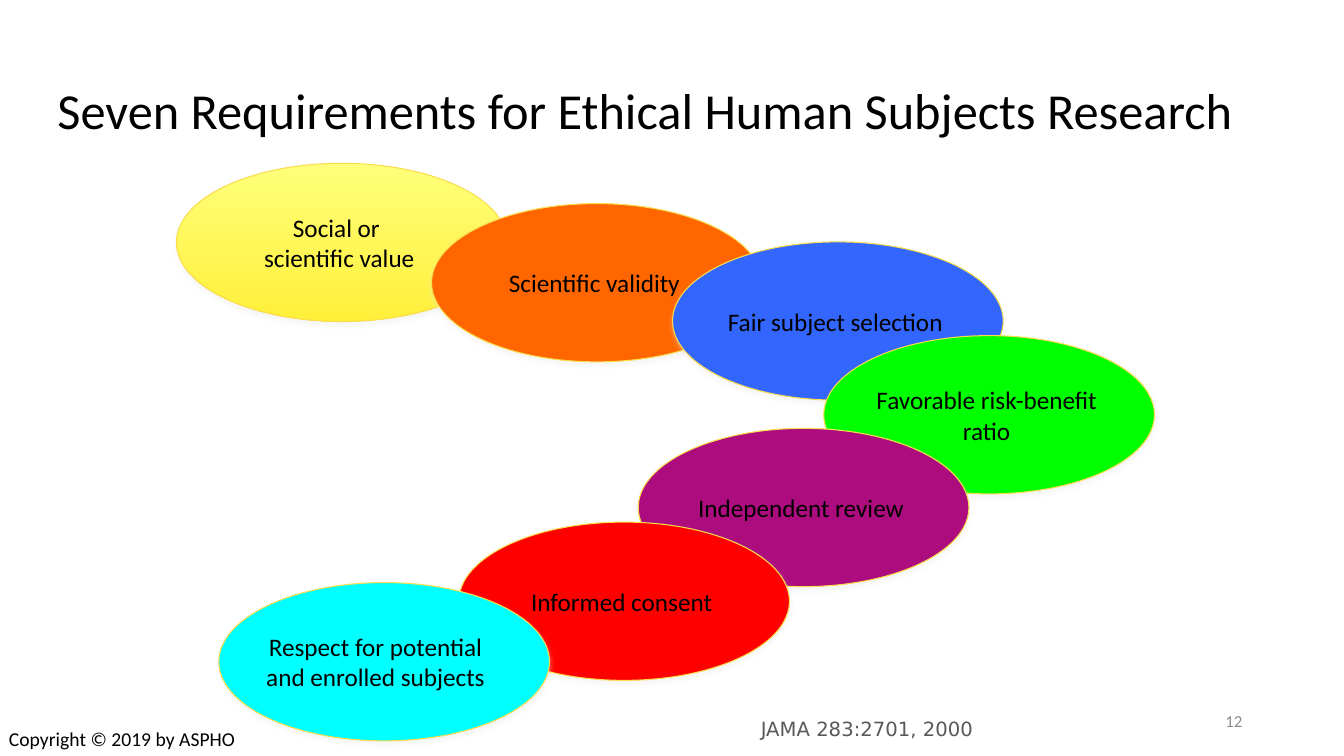
from lxml import etree
from pptx import Presentation
from pptx.dml.color import RGBColor
from pptx.enum.shapes import MSO_SHAPE
from pptx.enum.text import MSO_ANCHOR, MSO_AUTO_SIZE, PP_ALIGN
from pptx.oxml import parse_xml
from pptx.oxml.ns import nsdecls
from pptx.util import Inches, Pt

LEFT, MID, RIGHT = PP_ALIGN.LEFT, PP_ALIGN.CENTER, PP_ALIGN.RIGHT
TOP, CENTER = MSO_ANCHOR.TOP, MSO_ANCHOR.MIDDLE
OVAL = MSO_SHAPE.OVAL
GROW, FIXED = MSO_AUTO_SIZE.SHAPE_TO_FIT_TEXT, MSO_AUTO_SIZE.NONE

OVAL_W, OVAL_H = 3.28, 1.57
LABEL_W, LABEL_H = 2.34, 0.68
INSETS = (0.1, 0.05, 0.1, 0.05)

# label, left, top, fill (two colours make a gradient), label shift
STEPS = [
    ("Social or \vscientific value", 1.75, 1.62, ("FFFF7A", "FFF03A"), 0),
    ("Scientific validity", 4.28, 2.02, ("FF6600",), 0),
    ("Fair subject selection", 6.67, 2.4, ("3366FF",), 0),
    ("Favorable risk-benefit ratio", 8.17, 3.33, ("00FF00",), 0),
    ("Independent review", 6.33, 4.25, ("AC0C7E",), 0),
    ("Informed consent", 4.55, 5.18, ("FF0000",), 0),
    ("Respect for potential and enrolled subjects", 2.17, 5.78, ("00FFFF",), -0.06),
]


def color(code):
    return RGBColor.from_string(code)


def write(shape, text, size=18, font="Calibri", ink="000000", align=LEFT,
          anchor=TOP, insets=INSETS, wrap=True, fit=FIXED, spacing=None):
    frame = shape.text_frame
    frame.word_wrap = wrap
    frame.auto_size = fit
    frame.vertical_anchor = anchor
    (frame.margin_left, frame.margin_top,
     frame.margin_right, frame.margin_bottom) = map(Inches, insets)
    para = frame.paragraphs[0]
    para.text = text
    para.alignment = align
    if spacing:
        para.line_spacing = spacing
    for run in para.runs:
        run.font.size = Pt(size)
        run.font.name = font
        run.font.color.rgb = color(ink)


def shade(shape):
    """Give the shape a soft shadow falling straight down."""
    shape.shadow.inherit = False
    effects = shape._element.spPr.find("{*}effectLst")
    effects.append(parse_xml(
        f'<a:outerShdw {nsdecls("a")} blurRad="{Pt(3)}" dist="{Pt(2)}" '
        'dir="5400000" rotWithShape="0"><a:srgbClr val="E7E6E6">'
        '<a:alpha val="35000"/></a:srgbClr></a:outerShdw>'))
    etree.cleanup_namespaces(effects)


class Deck:
    def __init__(self):
        self.file = Presentation()
        self.file.slide_width = Inches(13.33)
        self.file.slide_height = Inches(7.5)
        self.slide = self.file.slides.add_slide(self.file.slide_layouts[5])

    def title(self, text, box, **style):
        shape = self.slide.shapes.title
        shape.left, shape.top, shape.width, shape.height = map(Inches, box)
        write(shape, text, **style)

    def text(self, text, box, home=None, **style):
        home = home or self.slide
        write(home.shapes.add_textbox(*map(Inches, box)), text, **style)

    def oval(self, box, tones, home):
        shape = home.shapes.add_shape(OVAL, *map(Inches, box))
        if len(tones) > 1:
            shape.fill.gradient()
            shape.fill.gradient_angle = 270
            for stop, tone in zip(shape.fill.gradient_stops, tones):
                stop.color.rgb = color(tone)
        else:
            shape.fill.solid()
            shape.fill.fore_color.rgb = color(tones[0])
        shape.line.color.rgb = color("FADD4D")
        shape.line.width = Pt(0.75)
        shade(shape)

    def step(self, text, left, top, tones, shift):
        """Group an oval with the label at its centre."""
        group = self.slide.shapes.add_group_shape()
        group.shapes  # the group grows as its parts are added
        self.oval((left, top, OVAL_W, OVAL_H), tones, Home(group.shapes))
        box = (left + (OVAL_W - LABEL_W) / 2 + shift,
               top + (OVAL_H - LABEL_H) / 2, LABEL_W, LABEL_H)
        self.text(text, box, group, align=MID, anchor=CENTER,
                  insets=(0.04, 0.04, 0.09, 0.04))


class Home:
    def __init__(self, shapes):
        self.shapes = shapes


def main():
    deck = Deck()
    deck.title("Seven Requirements for Ethical Human Subjects Research",
               (0.47, 0.4, 11.95, 1.45), size=36, anchor=CENTER,
               insets=(0.1, 0.05, 0.09, 0.05), spacing=0.9)
    deck.text("12", (9.42, 6.95, 3, 0.4), size=12, ink="8C8C8C",
              align=RIGHT, anchor=CENTER)
    for step in STEPS:
        deck.step(*step)
    deck.text("JAMA 283:2701, 2000", (7.35, 7.06, 2.4, 0.34), size=14,
              font="DejaVu Sans", ink="595959", align=RIGHT, wrap=False, fit=GROW)
    deck.text("Copyright © 2019 by ASPHO", (-0.01, 7.16, 2.48, 0.34),
              size=14, fit=GROW)
    deck.file.save("out.pptx")


if __name__ == "__main__":
    main()
